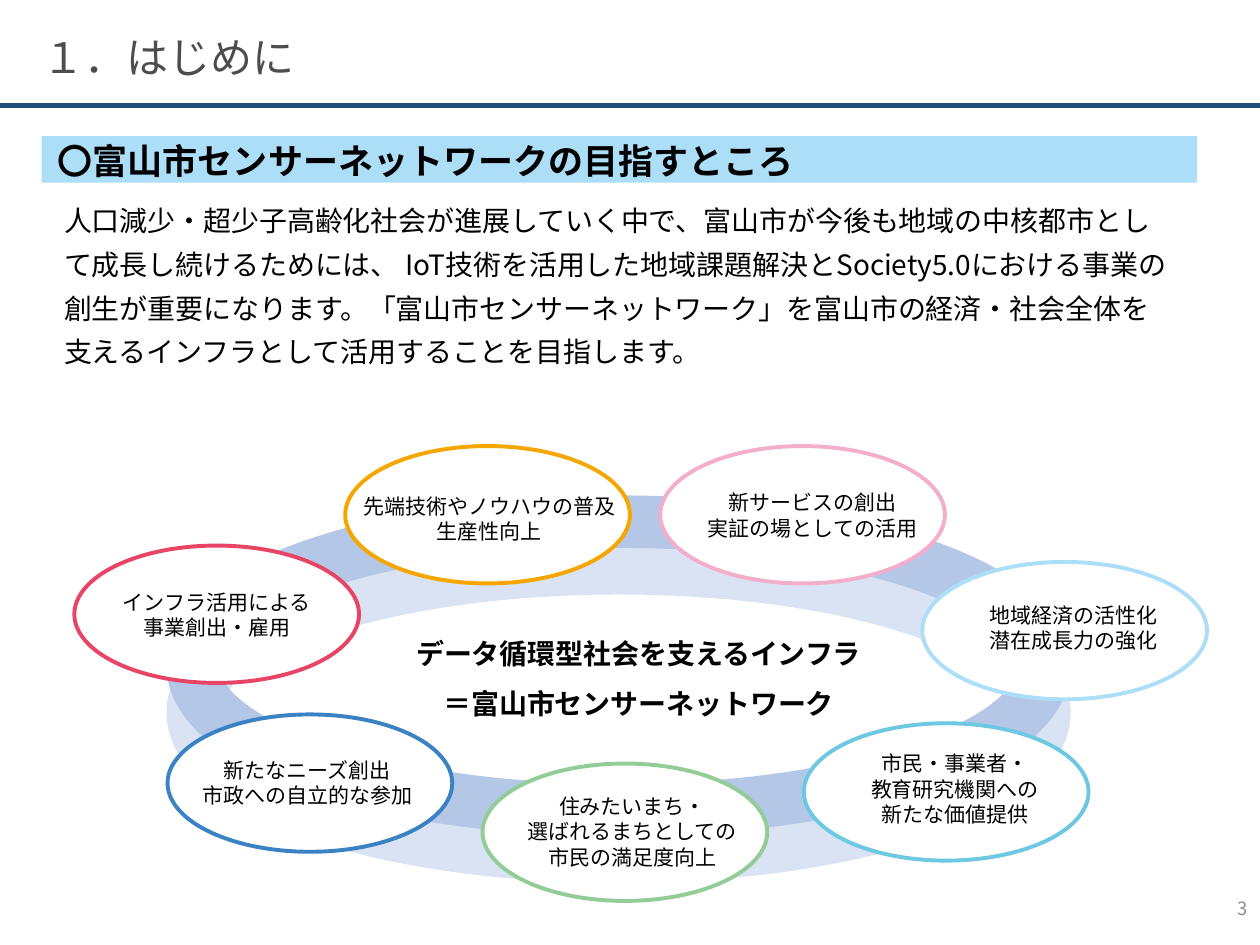
from collections import namedtuple

from lxml.etree import SubElement
from pptx import Presentation
from pptx.dml.color import RGBColor
from pptx.enum.shapes import MSO_CONNECTOR, MSO_SHAPE
from pptx.enum.text import MSO_ANCHOR, PP_ALIGN
from pptx.oxml.ns import qn
from pptx.util import Inches, Pt

FONT = "Noto Sans CJK JP"
Box = namedtuple("Box", "left top width height")

BODY = (
    "人口減少・超少子高齢化社会が進展していく中で、富山市が今後も地域の中核都市として"
    "成長し続けるためには、 IoT技術を活用した地域課題解決とSociety5.0における事業の創生が"
    "重要になります。「富山市センサーネットワーク」を富山市の経済・社会全体を支える"
    "インフラとして活用することを目指します。"
)

Goal = namedtuple("Goal", "left top color text_left text_top text_width lines")
GOALS = [
    Goal(0.09, 0.79, "E84566", 0.07, 1.09, 2.3, ["インフラ活用による", "事業創出・雇用"]),
    Goal(2.24, 0, "F5A600", 2.13, 0.33, 2.51, ["先端技術やノウハウの普及", "生産性向上"]),
    Goal(4.74, 0, "F3AECC", 4.8, 0.3, 2.3, ["新サービスの創出", "実証の場としての活用"]),
    Goal(5.88, 2.2, "6EC8E2", 5.93, 2.37, 2.3,
         ["市民・事業者・", "教育研究機関への", "新たな価値提供"]),
    Goal(3.33, 2.52, "92CC97", 3.37, 2.71, 2.3,
         ["住みたいまち・", "選ばれるまちとしての", "市民の満足度向上"]),
    Goal(0.83, 2.13, "3B82C5", 0.79, 2.42, 2.3, ["新たなニーズ創出", "市政への自立的な参加"]),
    Goal(6.82, 0.92, "ADDEF8", 6.87, 1.19, 2.3, ["地域経済の活性化", "潜在成長力の強化"]),
]


def rgb(color):
    """Turn a hex string into a colour."""
    return RGBColor.from_string(color)


def within(box, left, top, width, height):
    """Return a box placed relative to another box."""
    return Box(box.left + left, box.top + top, width, height)


def add_text(slide, box, lines, size, color="000000", bold=False,
             align=PP_ALIGN.LEFT, spacing=1.0, anchor=MSO_ANCHOR.TOP):
    """Add a wrapping text box with one paragraph for each line."""
    shape = slide.shapes.add_textbox(*map(Inches, box))
    frame = shape.text_frame
    frame.word_wrap = True
    frame.vertical_anchor = anchor
    for index, line in enumerate(lines):
        paragraph = frame.add_paragraph() if index else frame.paragraphs[0]
        paragraph.alignment = align
        paragraph.line_spacing = spacing
        run = paragraph.add_run()
        run.text = line
        run.font.size = Pt(size)
        run.font.bold = bold
        run.font.color.rgb = rgb(color)
        run.font.name = FONT
        SubElement(run._r.get_or_add_rPr(), qn("a:ea"), typeface=FONT)


def add_shape(slide, kind, box, fill=None, line=None, width=0):
    """Add a flat preset shape with an optional fill and outline."""
    shape = slide.shapes.add_shape(kind, *map(Inches, box))
    shape.shadow.inherit = False
    if fill:
        shape.fill.solid()
        shape.fill.fore_color.rgb = rgb(fill)
    else:
        shape.fill.background()
    if line:
        shape.line.color.rgb = rgb(line)
        shape.line.width = Pt(width)
    else:
        shape.line.fill.background()


def add_header(slide, box):
    """Place the slide title and the rule below it."""
    bottom = Inches(box.top + box.height)
    rule = slide.shapes.add_connector(
        MSO_CONNECTOR.STRAIGHT, Inches(box.left), bottom,
        Inches(box.left + box.width), bottom)
    rule.line.color.rgb = rgb("1F4E79")
    rule.line.width = Pt(3)
    SubElement(rule._element.spPr, qn("a:effectLst"))
    add_text(slide, within(box, 0.24, 0.08, 8.29, 0.63), ["１．はじめに"], 24,
             color="4D4D4D", spacing=1.3)


def add_introduction(slide, box):
    """Place the highlighted heading and the body paragraph."""
    add_shape(slide, MSO_SHAPE.RECTANGLE, within(box, 0, 0, box.width, 0.37), fill="ADDEF8")
    add_text(slide, within(box, 0.03, -0.02, 8.77, 0.44),
             ["〇富山市センサーネットワークの目指すところ"], 20, bold=True)
    add_text(slide, within(box, 0.08, 0.41, 9.01, 1.5), [BODY], 16, spacing=1.3)


def add_goal(slide, box, goal):
    """Place one outlined ellipse and its label."""
    add_shape(slide, MSO_SHAPE.OVAL, within(box, goal.left, goal.top, 2.26, 1.09),
              fill="FFFFFF", line=goal.color, width=2.25)
    height = 0.56 if len(goal.lines) == 2 else 0.79
    add_text(slide, within(box, goal.text_left, goal.text_top, goal.text_width, height),
             goal.lines, 12, align=PP_ALIGN.CENTER)


def add_cycle(slide, box):
    """Place the double ring, the goals around it and the central message."""
    for top, color in ((0.97, "DAE3F3"), (0.6, "B4C7E7")):
        add_shape(slide, MSO_SHAPE.OVAL, within(box, 1.03, top, 6.76, 2.29),
                  line=color, width=30)
    for goal in GOALS:
        add_goal(slide, box, goal)
    add_text(slide, within(box, 1.88, 1.33, 5.38, 0.91),
             ["データ循環型社会を支えるインフラ", "＝富山市センサーネットワーク"], 16,
             bold=True, align=PP_ALIGN.CENTER, spacing=1.5)


def main():
    """Build and save the slide."""
    presentation = Presentation()
    presentation.slide_width = Inches(10)
    presentation.slide_height = Inches(7.5)
    slide = presentation.slides.add_slide(presentation.slide_layouts[6])
    add_header(slide, Box(0, 0, 10, 0.84))
    add_introduction(slide, Box(0.33, 1.08, 9.17, 1.91))
    add_cycle(slide, Box(0.5, 3.54, 9.08, 3.61))
    add_text(slide, Box(9.6, 7.01, 0.4, 0.4), ["3"], 10.5, color="8C8C8C",
             align=PP_ALIGN.RIGHT, anchor=MSO_ANCHOR.MIDDLE)
    presentation.save("out.pptx")


if __name__ == "__main__":
    main()
